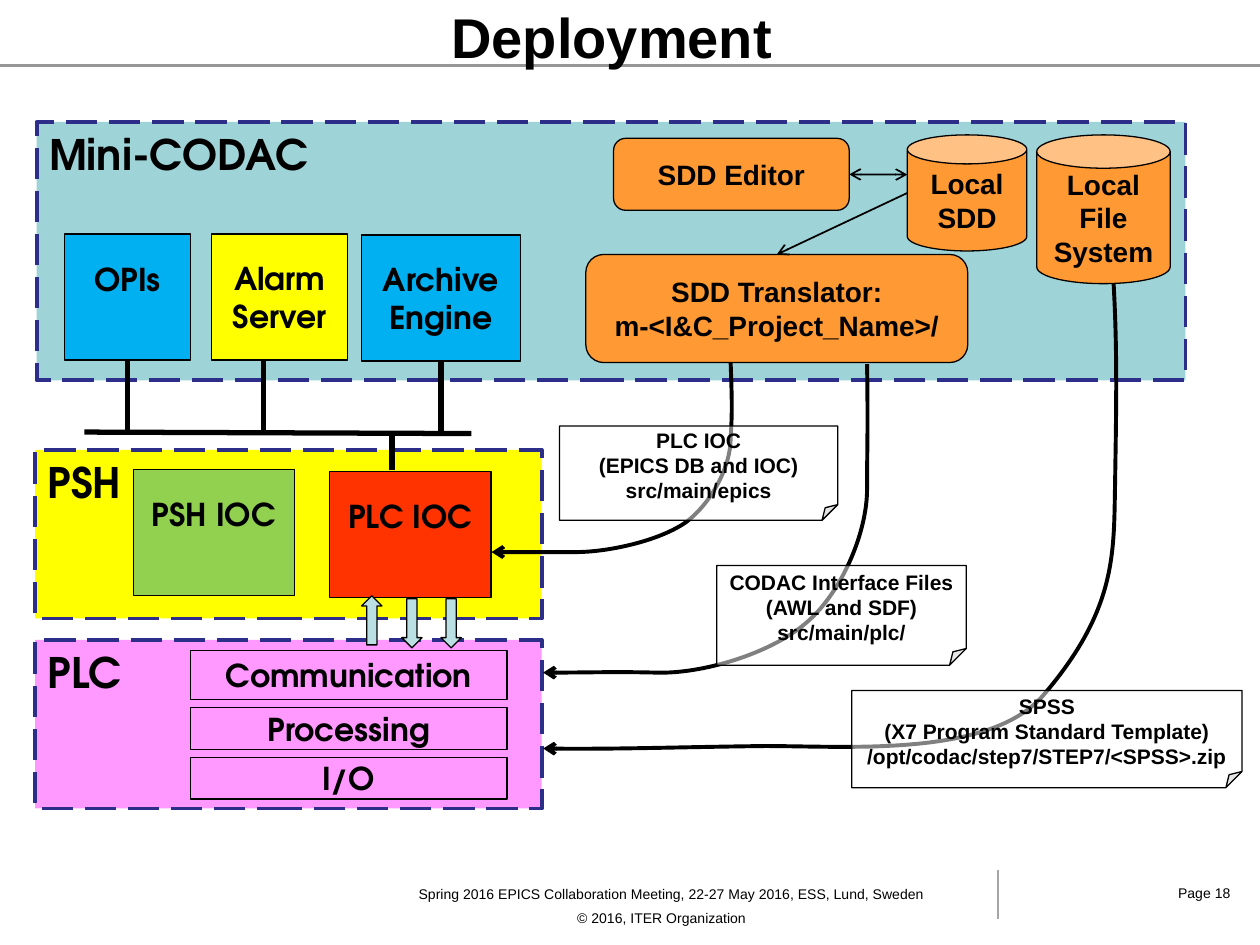
from lxml.etree import SubElement
from pptx import Presentation
from pptx.dml.color import RGBColor
from pptx.enum.dml import MSO_LINE
from pptx.enum.shapes import MSO_CONNECTOR, MSO_SHAPE as S
from pptx.enum.text import MSO_ANCHOR as ANCHOR, PP_ALIGN as ALIGN
from pptx.oxml.ns import qn
from pptx.util import Cm, Pt

color = RGBColor.from_string
GEOMETRIC = "TeX Gyre Adventor"
BLACK, ORANGE, CYAN, YELLOW = "000000", "FF9933", "00B0F0", "FFFF00"

prs = Presentation()
prs.slide_width, prs.slide_height = Cm(25.4), Cm(19.05)
slide = prs.slides.add_slide(prs.slide_layouts[6])
shapes = slide.shapes


def write(shape, lines, size, font="Arial", bold=True, align=ALIGN.CENTER,
          anchor=ANCHOR.MIDDLE, gap=0):
    frame = shape.text_frame
    frame.vertical_anchor = anchor
    for i, line in enumerate(lines):
        paragraph = frame.add_paragraph() if i else frame.paragraphs[0]
        paragraph.alignment = align
        if i and gap:
            paragraph.space_before = Pt(gap)
        run = paragraph.add_run()
        run.text = line
        run.font.size, run.font.bold, run.font.name = Pt(size), bold, font
        run.font.color.rgb = color(BLACK)
    return frame


def draw(kind, box, fill, line=BLACK, width=0.75):
    shape = shapes.add_shape(kind, *map(Cm, box))
    shape.shadow.inherit = False
    if fill:
        shape.fill.solid()
        shape.fill.fore_color.rgb = color(fill)
    else:
        shape.fill.background()
    shape.line.color.rgb = color(line)
    shape.line.width = Pt(width)
    return shape


for box, fill, label in [
    ((0.74, 2.46, 23.16, 5.21), "9ED3D7", "Mini-CODAC"),
    ((0.71, 9.07, 10.21, 3.4), YELLOW, "PSH"),
    ((0.71, 12.9, 10.21, 3.4), "FF99FF", "PLC"),
]:
    zone = draw(S.RECTANGLE, box, fill, "2D2D8A", 2.25)
    zone.line.dash_style = MSO_LINE.LONG_DASH
    write(zone, [label], 24, GEOMETRIC, align=ALIGN.LEFT, anchor=ANCHOR.TOP)

parts = {}
for box, fill, lines, bottom in [
    ((2.69, 9.47, 3.25, 2.54), "92D050", ["PSH IOC"], 0.87),
    ((6.65, 9.5, 3.25, 2.54), "FF3300", ["PLC IOC"], 0.87),
    ((1.3, 4.72, 2.54, 2.54), CYAN, ["OPIs"], 0.87),
    ((4.27, 4.72, 2.74, 2.54), YELLOW, ["Alarm", "Server"], 0.13),
    ((7.29, 4.74, 3.2, 2.54), CYAN, ["Archive", "Engine"], 0.13),
    ((3.84, 13.11, 6.38, 0.99), None, ["Communication"], 0.13),
    ((3.84, 14.27, 6.38, 0.84), None, ["Processing"], 0.13),
    ((3.84, 15.27, 6.38, 0.84), None, ["I/O"], 0.13),
]:
    block = draw(S.RECTANGLE, box, fill)
    frame = write(block, lines, 18, GEOMETRIC)
    frame.margin_left = frame.margin_right = Cm(0.1)
    frame.margin_bottom = Cm(bottom)
    parts[lines[0]] = block

for left, top, turn in [(7.29, 12.01, 180), (8.1, 12.07, 0), (8.89, 12.07, 0)]:
    signal = draw(S.DOWN_ARROW, (left, top, 0.41, 0.99), "BBE0E3")
    signal.rotation = turn

for kind, box, lines in [
    (S.CAN, (18.29, 2.72, 2.41, 2.34), ["Local SDD"]),
    (S.FLOWCHART_ALTERNATE_PROCESS, (12.37, 2.79, 4.75, 1.45), ["SDD Editor"]),
    (S.FLOWCHART_ALTERNATE_PROCESS, (11.81, 5.13, 7.7, 2.18),
     ["SDD Translator:", "m-<I&C_Project_Name>/"]),
    (S.CAN, (20.9, 2.72, 2.69, 3), ["Local", "File System"]),
]:
    tool = draw(kind, box, ORANGE)
    frame = write(tool, lines, 16)
    frame.margin_left = frame.margin_right = Cm(0.1)
    parts[lines[0]] = tool

for ends, hue, width, heads, begin, end in [
    ((0, 1.32, 25.4, 1.32), "969696", 1.25, [], None, None),
    ((20.12, 17.53, 20.12, 18.52), "A6A6A6", 0.75, [], None, None),
    ((1.7, 8.71, 9.5, 8.74), BLACK, 3, [], None, None),
    ((2.57, 7.26, 2.57, 8.74), BLACK, 3, [], "OPIs", None),
    ((5.31, 7.24, 5.31, 8.69), BLACK, 3, [], None, None),
    ((8.89, 7.28, 8.89, 8.71), BLACK, 3, [], "Archive", None),
    ((7.9, 8.71, 7.9, 9.47), BLACK, 3, [], None, None),
    ((17.12, 3.52, 18.29, 3.52), BLACK, 1, ["headEnd", "tailEnd"], "SDD Editor", None),
    ((18.29, 3.89, 15.66, 5.13), BLACK, 1, ["tailEnd"], None, "SDD Translator:"),
]:
    link = shapes.add_connector(MSO_CONNECTOR.STRAIGHT, *map(Cm, ends))
    link.line.color.rgb = color(hue)
    link.line.width = Pt(width)
    for head in heads:
        SubElement(link.line._get_or_add_ln(), qn("a:" + head), type="arrow")
    SubElement(link._element.spPr, qn("a:effectLst"))
    if begin:
        link.begin_connect(parts[begin], 3 if begin == "SDD Editor" else 2)
    if end:
        link.end_connect(parts[end], 0)

for points in [
    [(22.45, 5.72), (22.53, 7.16), (22.5, 8.36), (22.48, 9.73), (22.45, 11.13),
     (22.53, 12.27), (21.03, 14.02), (19.94, 15.27), (17.12, 15.04), (15.42, 15.04),
     (13.72, 15.06), (12.42, 15.11), (10.95, 15.09)],
    [(17.48, 7.34), (17.5, 8.74), (17.48, 8.97), (17.48, 9.86), (17.48, 10.74),
     (16.97, 11.94), (16.26, 12.55), (15.54, 13.18), (14.15, 13.59), (13.23, 13.56),
     (12.4, 13.54), (11.89, 13.56), (10.95, 13.56)],
    [(14.73, 7.32), (14.76, 8.15), (14.76, 8.31), (14.73, 8.84), (14.73, 9.4),
     (14.35, 10.13), (13.84, 10.52), (13.31, 10.9), (12.27, 11.13), (11.61, 11.13),
     (11, 11.13), (10.59, 11.13), (9.91, 11.13)],
]:
    start, *rest = [(Cm(x), Cm(y)) for x, y in points]
    builder = shapes.build_freeform(*start, scale=1.0)
    builder.add_line_segments(rest, close=False)
    flow = builder.convert_to_shape()
    segments = flow._element.xpath(".//a:lnTo")
    outline = segments[0].getparent()
    for i in range(0, len(segments), 3):
        bezier = SubElement(outline, qn("a:cubicBezTo"))
        for segment in segments[i:i + 3]:
            bezier.append(segment[0])
            outline.remove(segment)
    flow.shadow.inherit = False
    flow.fill.background()
    flow.line.color.rgb = color(BLACK)
    flow.line.width = Pt(2.25)
    SubElement(flow.line._get_or_add_ln(), qn("a:tailEnd"), type="arrow")

for box, lines in [
    ((17.17, 13.92, 7.87, 1.96),
     ["SPSS", "(X7 Program Standard Template)", "/opt/codac/step7/STEP7/<SPSS>.zip"]),
    ((14.45, 11.4, 5.03, 2.01),
     ["CODAC Interface Files", "(AWL and SDF)", "src/main/plc/"]),
    ((11.28, 8.59, 5.61, 1.9),
     ["PLC IOC", "(EPICS DB and IOC)", "src/main/epics"]),
]:
    note = draw(S.FOLDED_CORNER, box, "FFFFFF")
    tint = note._element.spPr.xpath("./a:solidFill/a:srgbClr")[0]
    SubElement(tint, qn("a:alpha"), val="50000")
    frame = write(note, lines, 12)
    frame.margin_left = frame.margin_right = Cm(0.1)

title = shapes.add_textbox(Cm(8.79), Cm(-0.08), Cm(7.09), Cm(1.63))
write(title, ["Deployment"], 32, anchor=ANCHOR.TOP)

footer = shapes.add_textbox(Cm(7.19), Cm(17.7), Cm(12.7), Cm(1.12))
footer.text_frame.word_wrap = True
write(footer, ["Spring 2016 EPICS Collaboration Meeting, 22-27 May 2016, ESS, Lund, Sweden",
               "© 2016, ITER Organization\t"], 8, bold=False, gap=4.5)

page = shapes.add_textbox(Cm(23.5), Cm(17.7), Cm(1.63), Cm(0.61))
write(page, ["Page 18"], 8, bold=False, align=ALIGN.LEFT)

prs.save("out.pptx")
